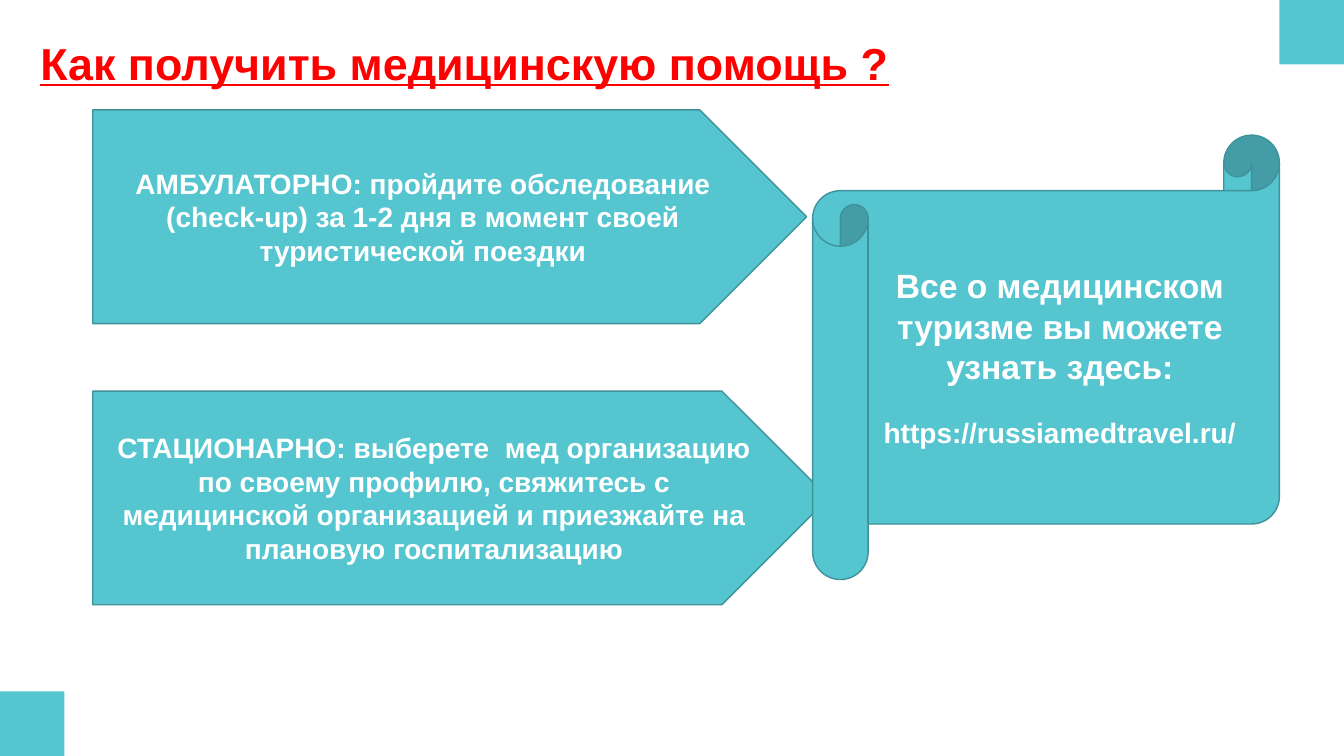
from pptx import Presentation
from pptx.dml.color import RGBColor
from pptx.enum.shapes import MSO_SHAPE
from pptx.enum.text import MSO_ANCHOR, MSO_AUTO_SIZE, PP_ALIGN
from pptx.util import Pt

PX = 9144
WIDTH, HEIGHT = 1333, 750
CORNER = 64
FONT = "Arial"
TEAL = RGBColor(0x55, 0xC5, 0xD0)
DARK_TEAL = RGBColor(0x3F, 0x92, 0x9A)
RED = RGBColor(0xFF, 0x00, 0x00)
WHITE = RGBColor(0xFF, 0xFF, 0xFF)
RECT = MSO_SHAPE.RECTANGLE
PENTAGON = MSO_SHAPE.PENTAGON
SCROLL = MSO_SHAPE.HORIZONTAL_SCROLL
MIDDLE = MSO_ANCHOR.MIDDLE
GROW = MSO_AUTO_SIZE.SHAPE_TO_FIT_TEXT
LEFT, CENTER = PP_ALIGN.LEFT, PP_ALIGN.CENTER


def emu(box):
    return [v * PX for v in box]


def format_text(p, size, color, align):
    p.alignment = align
    for r in p.runs:
        r.font.name = FONT
        r.font.size = Pt(size)
        r.font.bold = True
        r.font.color.rgb = color


def add_shape(s, kind, box):
    sp = s.shapes.add_shape(kind, *emu(box))
    sp.shadow.inherit = False
    sp.fill.solid()
    sp.fill.fore_color.rgb = TEAL
    sp.line.fill.background()
    return sp


def add_corners(s, box):
    x, y, w, h = box
    add_shape(s, RECT, (x + w - CORNER, y, CORNER, CORNER))
    add_shape(s, RECT, (x, y + h - CORNER, CORNER, CORNER))


def add_title(s, box, text):
    sp = s.shapes.title
    sp.left, sp.top, sp.width, sp.height = emu(box)
    tf = sp.text_frame
    tf.text = text
    tf.word_wrap = True
    tf.auto_size = GROW
    tf.vertical_anchor = MIDDLE
    tf.margin_left = tf.margin_right = tf.margin_top = tf.margin_bottom = 0
    p = tf.paragraphs[0]
    format_text(p, 32, RED, LEFT)
    p.runs[0].font.underline = True
    p.line_spacing = Pt(24)
    p.space_after = Pt(8)


def add_panel(s, kind, box, lines):
    sp = add_shape(s, kind, box)
    sp.line.color.rgb = DARK_TEAL
    sp.line.width = Pt(1)
    tf = sp.text_frame
    tf.word_wrap = True
    tf.vertical_anchor = MIDDLE
    for i, (text, size) in enumerate(lines):
        p = tf.add_paragraph() if i else tf.paragraphs[0]
        p.text = text
        format_text(p, size, WHITE, CENTER)
        if i:
            p.space_before = Pt(21)


def build_slide(prs):
    s = prs.slides.add_slide(prs.slide_layouts[5])
    add_corners(s, (0, 0, WIDTH, HEIGHT))
    add_title(s, (40, 54, 1112, 36), "Как получить медицинскую помощь ?")
    add_panel(s, PENTAGON, (92, 109, 708, 212), [
        ("АМБУЛАТОРНО: пройдите обследование (check-up) за 1-2 дня "
         "в момент своей туристической поездки", 20)])
    add_panel(s, PENTAGON, (92, 388, 730, 212), [
        ("СТАЦИОНАРНО: выберете  мед организацию по своему профилю, "
         "свяжитесь с медицинской организацией и приезжайте на "
         "плановую госпитализацию", 20)])
    add_panel(s, SCROLL, (806, 134, 463, 441), [
        ("Все о медицинском туризме вы можете узнать здесь:", 24),
        ("https://russiamedtravel.ru/", 20)])


def main():
    prs = Presentation()
    prs.slide_width, prs.slide_height = emu((WIDTH, HEIGHT))
    build_slide(prs)
    prs.save("out.pptx")


if __name__ == "__main__":
    main()
